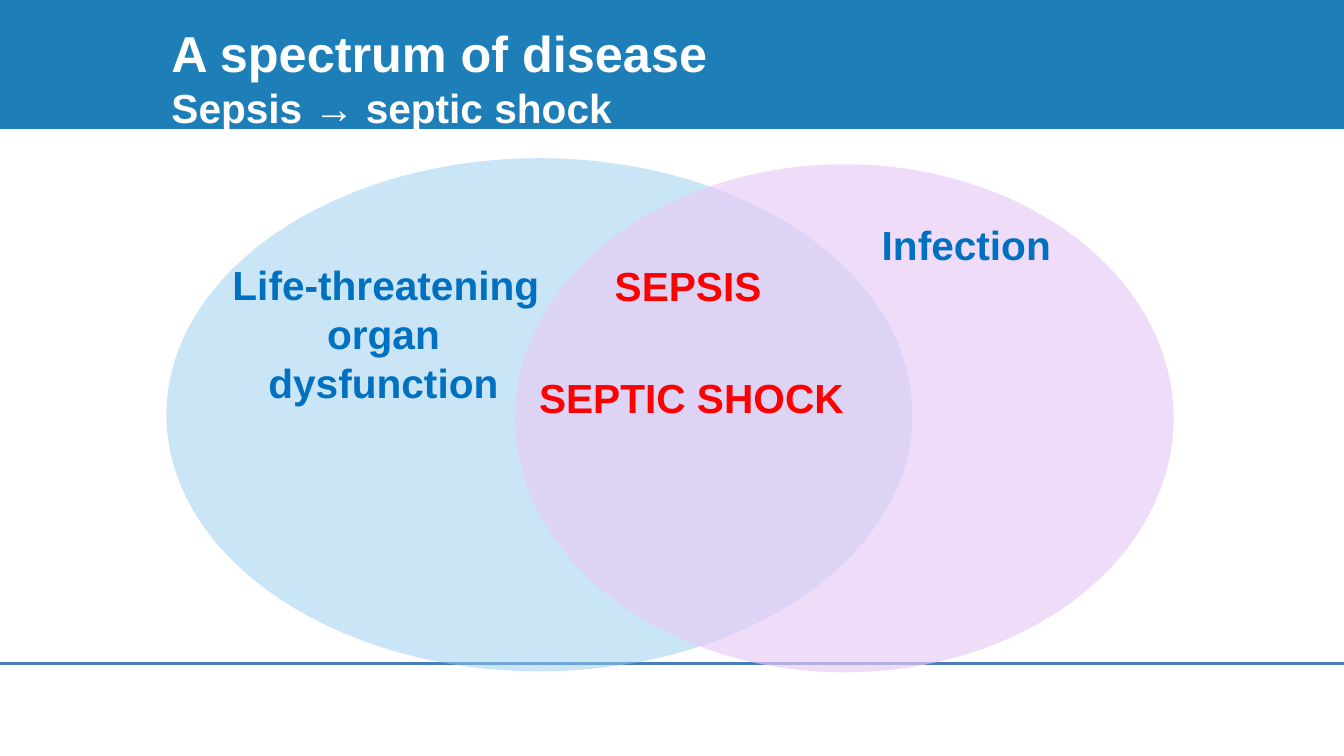
from lxml import etree
from pptx import Presentation
from pptx import util as u
from pptx.dml.color import RGBColor
from pptx.enum import shapes, text
from pptx.oxml.ns import qn

COLOURS = {
    "banner": "1E7FB8", "white": "FFFFFF", "rule": "4A7EBB",
    "dysfunction": "96CCEE", "infection": "E7CBF5",
    "condition": "0070C0", "outcome": "FF0000",
}
WIDTH, HEIGHT = u.Inches(13.33), u.Inches(7.5)


def rgb(name):
    return RGBColor.from_string(COLOURS[name])


def area(left, top, width, height):
    """Turn percentages of the slide into lengths."""
    return (int(WIDTH * left / 100), int(HEIGHT * top / 100),
            int(WIDTH * width / 100), int(HEIGHT * height / 100))


def add_filled(slide, kind, place, colour, opacity=100):
    filled = slide.shapes.add_shape(kind, *area(*place))
    filled.shadow.inherit = False
    filled.fill.solid()
    filled.fill.fore_color.rgb = rgb(colour)
    filled.line.fill.background()
    if opacity < 100:
        tint = filled.fill._xPr.find(qn("a:solidFill"))[0]
        etree.SubElement(tint, qn("a:alpha"), val=str(opacity * 1000))


def add_rule(slide, level):
    y = int(HEIGHT * level / 100)
    rule = slide.shapes.add_connector(shapes.MSO_CONNECTOR.STRAIGHT, 0, y, WIDTH, y)
    rule.line.color.rgb = rgb("rule")
    rule.line.width = u.Pt(2)
    etree.SubElement(rule._element.spPr, qn("a:effectLst"))


def add_frame(slide, place, inset=0.0):
    frame = slide.shapes.add_textbox(*area(*place)).text_frame
    frame.word_wrap = True
    frame.margin_left = frame.margin_right = u.Inches(inset)
    frame.margin_top = frame.margin_bottom = u.Inches(inset)
    return frame


def set_font(font, size, colour, bold=True):
    font.name, font.size, font.bold = "Arial", u.Pt(size), bold
    font.color.rgb = rgb(colour)


def add_label(slide, wording, place, colour):
    label = add_frame(slide, place).paragraphs[0]
    label.text = wording
    label.alignment = text.PP_ALIGN.CENTER
    # First-line indent
    label._p.get_or_add_pPr().set("indent", str(u.Inches(0.05)))
    set_font(label.font, 29, colour)


def add_title(slide):
    frame = add_frame(slide, (12.38, 1.87, 73.67, 16.67), 0.05)
    frame.vertical_anchor = text.MSO_ANCHOR.MIDDLE
    heading = frame.paragraphs[0]
    for wording, size, bold in (("A spectrum of disease", 36, True),
                                ("Sepsis ", 29, True),
                                ("→", 29, False),
                                (" septic shock", 29, True)):
        run = heading.add_run()
        run.text = wording
        set_font(run.font, size, "white", bold)
        if size == 36:
            heading.add_line_break()


def main():
    deck = Presentation()
    deck.slide_width, deck.slide_height = WIDTH, HEIGHT
    slide = deck.slides.add_slide(deck.slide_layouts[6])

    # Banner and footer
    add_filled(slide, shapes.MSO_SHAPE.RECTANGLE, (0, 0, 100, 17.07), "banner")
    add_rule(slide, 87.73)

    # Overlapping ellipses
    oval = shapes.MSO_SHAPE.OVAL
    add_filled(slide, oval, (12.38, 20.93, 55.51, 67.87), "dysfunction", 50)
    add_filled(slide, oval, (38.33, 21.73, 48.99, 67.2), "infection", 67)

    # Labels
    for label in (
        ("Life-threatening organ dysfunction", (16.65, 34.4, 23.78, 19.33), "condition"),
        ("Infection", (60.24, 29.07, 22.96, 6), "condition"),
        ("SEPSIS", (45.24, 34.53, 11.55, 6), "outcome"),
        ("SEPTIC SHOCK", (33.68, 49.33, 35.18, 6), "outcome"),
    ):
        add_label(slide, *label)

    add_title(slide)
    deck.save("out.pptx")


if __name__ == "__main__":
    main()
